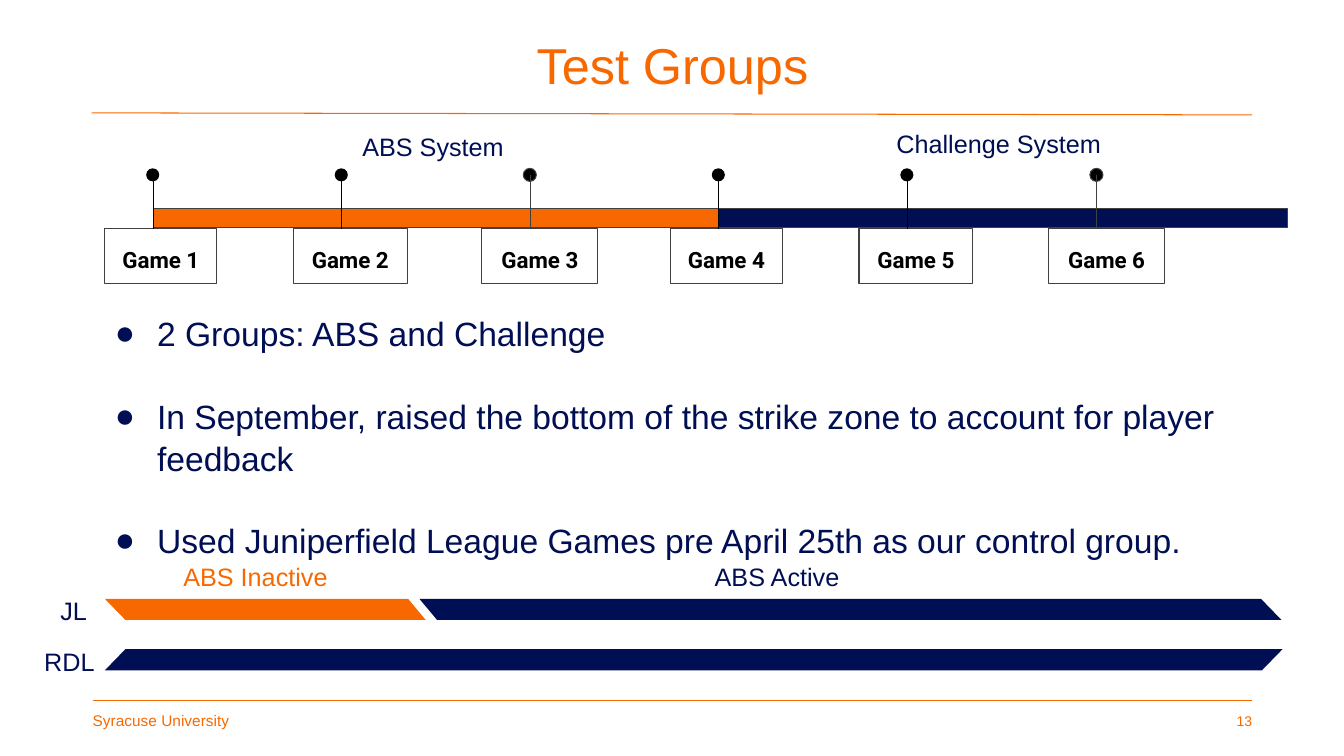
from pptx import Presentation
from pptx.dml.color import RGBColor
from pptx.enum.shapes import MSO_CONNECTOR, MSO_SHAPE
from pptx.enum.text import MSO_ANCHOR as ANCHOR, MSO_AUTO_SIZE, PP_ALIGN as ALIGN
from pptx.oxml.ns import qn
from pptx.util import Pt
from lxml.etree import SubElement

PX = 9144  # 100 px to the inch
COLORS = {
    name: RGBColor.from_string(code)
    for name, code in {
        "orange": "F76900", "navy": "000E54", "black": "000000",
        "gray": "3F403F", "white": "FFFFFF",
    }.items()
}

deck = Presentation()
deck.slide_width, deck.slide_height = 1333 * PX, 750 * PX
page = deck.slides.add_slide(deck.slide_layouts[5])


def add_block(kind, left, top, width, height, fill=None, outline=None):
    block = page.shapes.add_shape(kind, left * PX, top * PX, width * PX, height * PX)
    block.shadow.inherit = False
    if fill:
        block.fill.solid()
        block.fill.fore_color.rgb = COLORS[fill]
    else:
        block.fill.background()
    if outline:
        block.line.color.rgb = COLORS[outline]
        block.line.width = Pt(0.75)
    else:
        block.line.fill.background()
    return block


def write(para, text, size, color, font="Arial", bold=False):
    span = para.add_run()
    span.text = text
    span.font.size = Pt(size)
    span.font.name = font
    span.font.bold = bold
    span.font.color.rgb = COLORS[color]


# Title
title = page.shapes.title
title.left, title.top, title.width, title.height = 92 * PX, 32 * PX, 1150 * PX, 72 * PX
frame = title.text_frame
frame.auto_size = MSO_AUTO_SIZE.NONE
frame.vertical_anchor = ANCHOR.MIDDLE
frame.margin_left = frame.margin_right = 0
frame.margin_top = frame.margin_bottom = 5 * PX
frame.paragraphs[0].alignment = ALIGN.CENTER
frame.paragraphs[0].line_spacing = 0.9
write(frame.paragraphs[0], "Test Groups", 36, "orange")

# Rules above and below the content: x1, y1, x2, y2, color, points
lines = [
    (92, 695, 1242, 695, "orange", 0.75),
    (91, 112, 1242, 114, "orange", 0.75),
]

# Timeline of six games
for game in range(6):
    left = 152 + 936 * game // 5
    last_of_group = game % 3 == 2
    add_block(MSO_SHAPE.RECTANGLE, left, 207, 189, 19,
              "orange" if game < 3 else "navy", "gray")
    add_block(MSO_SHAPE.OVAL, left - 7, 167, 13, 13, "black",
              "gray" if last_of_group else None)
    box = add_block(MSO_SHAPE.RECTANGLE, left - 48, 227, 111 + 2 * (game % 3), 54,
                    outline="gray")
    frame = box.text_frame
    frame.word_wrap = True
    frame.vertical_anchor = ANCHOR.TOP
    frame.margin_left = frame.margin_right = 13 * PX
    frame.margin_top = frame.margin_bottom = 13 * PX
    para = frame.paragraphs[0]
    para.alignment = ALIGN.CENTER
    para.line_spacing = 1.15
    para.space_after = Pt(21)
    write(para, f"Game {game + 1}", 16, "black", "Roboto", True)
    lines.append((left, 174, left, 227, "gray" if last_of_group else "black", 0.75))

# Bulleted notes
notes = page.shapes.add_textbox(96 * PX, 299 * PX, 1141 * PX, 266 * PX)
frame = notes.text_frame
frame.word_wrap = True
frame.margin_left = frame.margin_right = 10 * PX
frame.margin_top = frame.margin_bottom = 10 * PX
for index, text in enumerate([
    "2 Groups: ABS and Challenge",
    "In September, raised the bottom of the strike zone to account for player feedback",
    "Used Juniperfield League Games pre April 25th as our control group.",
]):
    para = frame.add_paragraph() if index else frame.paragraphs[0]
    para.line_spacing = 1.04
    if index:
        para.space_before = Pt(29)
    properties = para._p.get_or_add_pPr()
    properties.set("marL", str(50 * PX))
    properties.set("indent", str(-42 * PX))
    bullet_color = SubElement(properties, qn("a:buClr"))
    SubElement(bullet_color, qn("a:srgbClr")).set("val", str(COLORS["navy"]))
    SubElement(properties, qn("a:buFont")).set("typeface", "Arial")
    SubElement(properties, qn("a:buChar")).set("char", "●")
    write(para, text, 24, "navy")

# League bars: left, top, width, color, mirrored
for left, top, width, color, mirrored in [
    (104, 594, 323, "orange", True),
    (104, 644, 1168, "navy", False),
    (407, 594, 864, "navy", True),
]:
    bar = add_block(MSO_SHAPE.PARALLELOGRAM, left, top, width, 21, color)
    bar.adjustments[0] = 0.97
    if mirrored:
        bar._element.spPr.find(qn("a:xfrm")).set("flipH", "1")
lines.append((407, 590, 432, 620, "white", 6))

# Rules, game pins and the gap between the league bars
for x1, y1, x2, y2, color, points in lines:
    line = page.shapes.add_connector(
        MSO_CONNECTOR.STRAIGHT, x1 * PX, y1 * PX, x2 * PX, y2 * PX)
    line.line.color.rgb = COLORS[color]
    line.line.width = Pt(points)
    SubElement(line._element.spPr, qn("a:effectLst"))

# Labels: text, left, top, width, height, size, color, alignment
for text, left, top, width, height, size, color, align in [
    ("ABS System", 149, 120, 561, 47, 18, "navy", ALIGN.CENTER),
    ("Challenge System", 710, 117, 561, 47, 18, "navy", ALIGN.CENTER),
    ("ABS Inactive", 172, 547, 169, 47, 18, "orange", ALIGN.LEFT),
    ("ABS Active", 699, 547, 169, 47, 18, "navy", ALIGN.LEFT),
    ("JL", 50, 581, 48, 47, 18, "navy", ALIGN.LEFT),
    ("RDL", 34, 631, 73, 47, 18, "navy", ALIGN.LEFT),
    ("Syracuse University", 92, 695, 210, 40, 11, "orange", ALIGN.LEFT),
    ("13", 1032, 695, 210, 40, 10, "orange", ALIGN.RIGHT),
]:
    label = page.shapes.add_textbox(left * PX, top * PX, width * PX, height * PX)
    frame = label.text_frame
    frame.word_wrap = True
    in_footer = top == 695
    frame.vertical_anchor = ANCHOR.MIDDLE if in_footer else ANCHOR.TOP
    frame.margin_left = frame.margin_right = 0 if in_footer else 10 * PX
    frame.margin_top = frame.margin_bottom = (5 if in_footer else 10) * PX
    frame.paragraphs[0].alignment = align
    write(frame.paragraphs[0], text, size, color)

deck.save("out.pptx")
